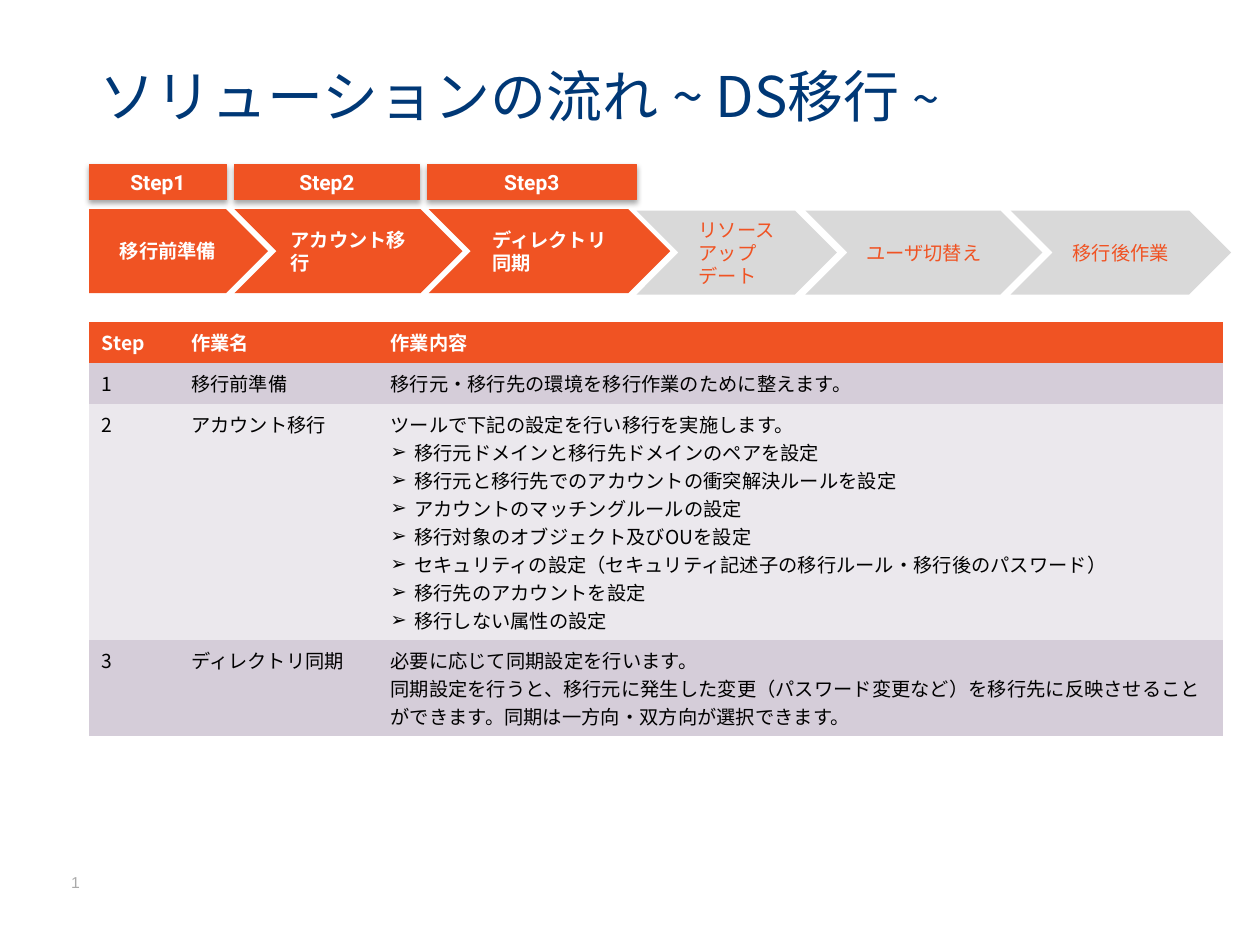
from lxml import etree
from pptx import Presentation
from pptx import util as u
from pptx.dml.color import RGBColor
from pptx.enum import shapes, text
from pptx.oxml import ns

Pt = u.Pt
CJK, LATIN = "Noto Sans CJK JP", "Roboto"
ORANGE, GREY, WHITE, BLACK, NAVY = "F05323", "D9D9D9", "FFFFFF", "000000", "003876"
BANDS = ("D5CDD9", "EBE8ED")
NO_STYLE = "{2D5ABB26-0587-4C30-8999-92F81FD0307C}"


def color(hex_code):
    return RGBColor.from_string(hex_code)


def sub(parent, tag, **attrs):
    return etree.SubElement(parent, ns.qn(tag), {k: str(v) for k, v in attrs.items()})


def add_run(p, content, size=11, font=CJK, fill=BLACK, bold=False):
    r = p.add_run()
    r.text = content
    r.font.size, r.font.bold, r.font.name = Pt(size), bold, font
    r.font.color.rgb = color(fill)
    sub(r._r.get_or_add_rPr(), "a:ea", typeface=font)
    return r


def add_text(tf, lines, spacing=None, bullets_from=None, **fmt):
    for i, line in enumerate(lines):
        p = tf.add_paragraph() if i else tf.paragraphs[0]
        p.alignment = text.PP_ALIGN.LEFT
        if spacing:
            p.line_spacing = spacing
        if bullets_from is not None and i >= bullets_from:
            pPr = p._p.get_or_add_pPr()
            indent = Pt(13.5)
            pPr.set("marL", str(indent))
            pPr.set("indent", str(-indent))
            sub(pPr, "a:buFont", typeface="Arial")
            sub(pPr, "a:buChar", char="➢")
        add_run(p, line, **fmt)


class Deck:
    def __init__(self, prs):
        self.s = prs.slides.add_slide(prs.slide_layouts[6])

    def box(self, x, y, w, h, lines, wrap=True, anchor=text.MSO_ANCHOR.TOP, **fmt):
        tf = self.s.shapes.add_textbox(Pt(x), Pt(y), Pt(w), Pt(h)).text_frame
        tf.word_wrap, tf.vertical_anchor = wrap, anchor
        add_text(tf, lines, **fmt)
        return tf

    def shape(self, kind, x, y, w, h, lines, back, **fmt):
        sp = self.s.shapes.add_shape(kind, Pt(x), Pt(y), Pt(w), Pt(h))
        sp.shadow.inherit = False
        sp.fill.solid()
        sp.fill.fore_color.rgb = color(back)
        sp.line.fill.background()
        tf = sp.text_frame
        tf.word_wrap, tf.vertical_anchor = True, text.MSO_ANCHOR.MIDDLE
        # Left-aligned lines, centred as one block
        tf._txBody.bodyPr.set("anchorCtr", "1")
        add_text(tf, lines, **fmt)
        return sp

    def label(self, x, y, w, h, content):
        sp = self.shape(shapes.MSO_SHAPE.RECTANGLE, x, y, w, h, [content], ORANGE,
                        size=12, font=LATIN, fill=WHITE, bold=True)
        sp.line.color.rgb = color(ORANGE)
        sp.line.width = Pt(0.75)
        effects = sp._element.spPr.find(ns.qn("a:effectLst"))
        shadow = sub(effects, "a:outerShdw", blurRad=Pt(3.1), dist=Pt(1.8),
                     dir=90 * 60000, rotWithShape=0)
        sub(sub(shadow, "a:srgbClr", val=BLACK), "a:alpha", val=35000)

    def table(self, x, y, widths, heights, rows):
        frame = self.s.shapes.add_table(len(rows), len(widths), Pt(x), Pt(y),
                                        Pt(sum(widths)), Pt(sum(heights)))
        tbl = frame.table
        tbl._tbl.tblPr[0].text = NO_STYLE
        tbl.horz_banding = False
        for col, width in zip(tbl.columns, widths):
            col.width = Pt(width)
        for i, (row, height, values) in enumerate(zip(tbl.rows, heights, rows)):
            row.height = Pt(height)
            header = i == 0
            for cell, value in zip(row.cells, values):
                cell.fill.solid()
                cell.fill.fore_color.rgb = color(ORANGE if header else BANDS[(i - 1) % 2])
                lines = [value] if isinstance(value, str) else value
                add_text(cell.text_frame, lines, bullets_from=1 if len(lines) > 2 else None,
                         fill=WHITE if header else BLACK, bold=header)


def main():
    prs = Presentation()
    prs.slide_width, prs.slide_height = Pt(720), Pt(540)
    d = Deck(prs)

    # Title and page number
    tf = d.box(50, 29, 620.5, 55.5, ["ソリューションの流れ ~ DS移行 "], spacing=0.9,
               anchor=text.MSO_ANCHOR.MIDDLE, size=32, fill=NAVY)
    add_run(tf.paragraphs[0], "~", size=28, fill=NAVY)
    d.box(33.6, 495.2, 26, 18, ["1"], wrap=False, size=9, font="Arial", fill="AAAAAA")

    # Process arrows: left, width, text; the first three are highlighted
    steps = [
        (51, 102.2, ["移行前準備"]),
        (134, 130.3, ["アカウント移行"]),
        (245, 138, ["ディレクトリ同期"]),
        (363.7, 114.5, ["リソース", "アップデート"]),
        (460.2, 135.4, ["ユーザ切替え"]),
        (577.5, 126, ["移行後作業"]),
    ]
    for i, (x, w, lines) in enumerate(steps):
        active = i < 3
        kind = shapes.MSO_SHAPE.CHEVRON if i else shapes.MSO_SHAPE.PENTAGON
        d.shape(kind, x, 119.5 if active else 120.3, w, 48, lines,
                ORANGE if active else GREY,
                fill=WHITE if active else ORANGE, bold=active)

    # Step labels
    for i, (x, w) in enumerate([(51, 78.5), (134, 105.8), (244.2, 119.5)], 1):
        d.label(x, 94, w, 20.2, f"Step{i}")

    # Work details
    d.table(51, 184, [51, 114, 483], [23.4, 23.4, 135, 55], [
        ["Step", "作業名", "作業内容"],
        ["1", "移行前準備", "移行元・移行先の環境を移行作業のために整えます。"],
        ["2", "アカウント移行", [
            "ツールで下記の設定を行い移行を実施します。",
            "移行元ドメインと移行先ドメインのペアを設定",
            "移行元と移行先でのアカウントの衝突解決ルールを設定",
            "アカウントのマッチングルールの設定",
            "移行対象のオブジェクト及びOUを設定",
            "セキュリティの設定（セキュリティ記述子の移行ルール・移行後のパスワード）",
            "移行先のアカウントを設定",
            "移行しない属性の設定",
        ]],
        ["3", "ディレクトリ同期", [
            "必要に応じて同期設定を行います。",
            "同期設定を行うと、移行元に発生した変更（パスワード変更など）を移行先に"
            "反映させることができます。同期は一方向・双方向が選択できます。",
        ]],
    ])
    prs.save("out.pptx")


if __name__ == "__main__":
    main()
